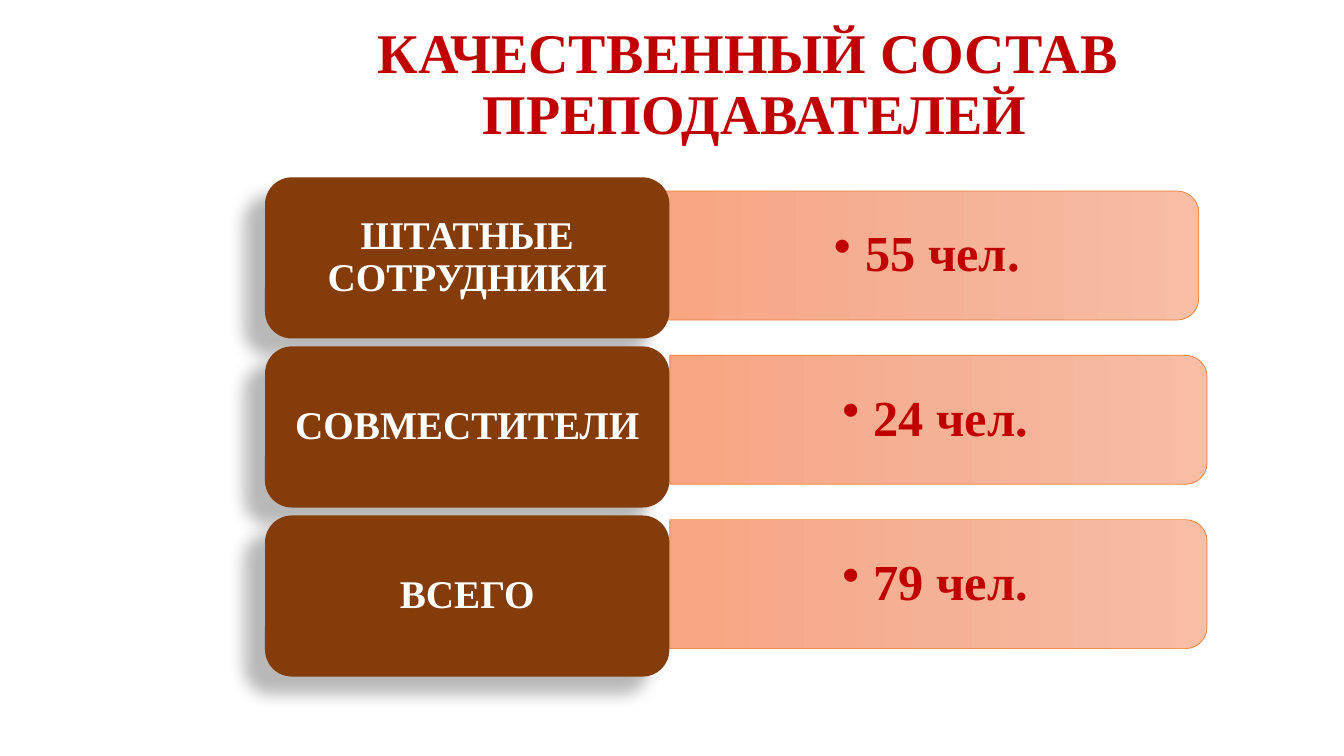
from lxml import etree
from pptx import Presentation
from pptx import util as u
from pptx.dml import color
from pptx.enum import shapes, text
from pptx.oxml import ns

RED = color.RGBColor(0xC0, 0x00, 0x00)
BROWN = color.RGBColor(0x84, 0x3C, 0x0B)
ORANGE = color.RGBColor(0xED, 0x7D, 0x31)
WHITE = color.RGBColor(0xFF, 0xFF, 0xFF)
BAR_STOPS = {
    0: color.RGBColor(0xF7, 0xBD, 0xA5),
    50: color.RGBColor(0xF5, 0xB1, 0x96),
    100: color.RGBColor(0xF8, 0xA5, 0x82),
}

STAFF = [
    ("ШТАТНЫЕ СОТРУДНИКИ", "55 чел.", 23.44),
    ("СОВМЕСТИТЕЛИ", "24 чел.", 23.65),
    ("ВСЕГО", "79 чел.", 23.65),
]
LABEL_LEFT, LABEL_TOP, LABEL_PITCH = 6.68, 4.47, 4.26
LABEL_WIDTH, LABEL_HEIGHT, LABEL_INSET = 10.19, 4.06, 0.2
BAR_LENGTH, BAR_THICKNESS = 13.54, 3.25
BAR_MIDDLE, BAR_PITCH = 6.44, 4.14
COUNT_WIDTH, COUNT_HEIGHT = 13.39, 2.92


def add_xml(parent, tag, **attributes):
    values = {name: str(value) for name, value in attributes.items()}
    return etree.SubElement(parent, ns.qn(tag), values)


class StaffSlide:
    font_format = {"name": "Times New Roman", "bold": True}

    def __init__(self, presentation):
        self.slide = presentation.slides.add_slide(presentation.slide_layouts[6])

    def add_text(self, box, wording, size, ink, margins, bullet=False):
        shape = self.slide.shapes.add_textbox(*map(u.Cm, box))
        frame = shape.text_frame
        horizontal, vertical = map(u.Cm, margins)
        frame_format = {
            "word_wrap": True,
            "vertical_anchor": text.MSO_ANCHOR.MIDDLE,
            "margin_left": horizontal,
            "margin_right": horizontal,
            "margin_top": vertical,
            "margin_bottom": vertical,
        }
        for name, value in frame_format.items():
            setattr(frame, name, value)
        paragraph = frame.paragraphs[0]
        paragraph.text = wording
        paragraph.alignment = text.PP_ALIGN.CENTER
        paragraph.line_spacing = 0.9
        if bullet:
            properties = paragraph._p.get_or_add_pPr()
            indent = u.Cm(0.79)
            properties.set("marL", str(indent))
            properties.set("indent", str(-indent))
            add_xml(properties, "a:buChar", char="•")
        for run in paragraph.runs:
            for name, value in {**self.font_format, "size": u.Pt(size)}.items():
                setattr(run.font, name, value)
            run.font.color.rgb = ink

    def add_bar(self, center, middle):
        shape = self.slide.shapes.add_shape(
            shapes.MSO_SHAPE.ROUND_2_SAME_RECTANGLE,
            u.Cm(center - BAR_THICKNESS / 2), u.Cm(middle - BAR_LENGTH / 2),
            u.Cm(BAR_THICKNESS), u.Cm(BAR_LENGTH))
        shape.rotation = 90
        shape.shadow.inherit = False
        shape.line.color.rgb = ORANGE
        shape.line.width = u.Pt(0.5)
        shape.fill.gradient()
        gradient = shape._element.spPr.find(ns.qn("a:gradFill"))
        stops = gradient.find(ns.qn("a:gsLst"))
        for stop in list(stops):
            stops.remove(stop)
        for position, shade in BAR_STOPS.items():
            stop = add_xml(stops, "a:gs", pos=position * 1000)
            add_xml(stop, "a:srgbClr", val=shade)
        shape.fill.gradient_angle = 270

    def add_label(self, top):
        shape = self.slide.shapes.add_shape(
            shapes.MSO_SHAPE.ROUNDED_RECTANGLE, u.Cm(LABEL_LEFT), u.Cm(top),
            u.Cm(LABEL_WIDTH), u.Cm(LABEL_HEIGHT))
        shape.shadow.inherit = False
        shape.fill.solid()
        shape.fill.fore_color.rgb = BROWN
        shape.line.fill.background()
        effects = shape._element.spPr.find(ns.qn("a:effectLst"))
        shadow = add_xml(effects, "a:outerShdw", blurRad=150000, dist=250000,
                         dir=141 * 60000, algn="tl", rotWithShape=0)
        black = add_xml(shadow, "a:srgbClr", val="000000")
        add_xml(black, "a:alpha", val=28000)

    def add_row(self, index, label, count, center):
        middle = BAR_MIDDLE + index * BAR_PITCH
        self.add_bar(center, middle)
        count_box = (center - 0.08 - COUNT_WIDTH / 2, middle - COUNT_HEIGHT / 2,
                     COUNT_WIDTH, COUNT_HEIGHT)
        self.add_text(count_box, count, 36, RED, (0.69, 0.36), bullet=True)
        top = LABEL_TOP + index * LABEL_PITCH
        self.add_label(top)
        label_box = (LABEL_LEFT + LABEL_INSET, top + LABEL_INSET,
                     LABEL_WIDTH - 2 * LABEL_INSET, LABEL_HEIGHT - 2 * LABEL_INSET)
        self.add_text(label_box, label, 28, WHITE, (0.3, 0.15))


def main():
    presentation = Presentation()
    presentation.slide_width = u.Cm(33.87)
    presentation.slide_height = u.Cm(19.05)
    staff_slide = StaffSlide(presentation)
    staff_slide.add_text((3.78, 0.58, 30.48, 3.18),
                         "КАЧЕСТВЕННЫЙ СОСТАВ \vПРЕПОДАВАТЕЛЕЙ", 40, RED, (0.25, 0.13))
    for index, row in enumerate(STAFF):
        staff_slide.add_row(index, *row)
    presentation.save("out.pptx")


if __name__ == "__main__":
    main()
